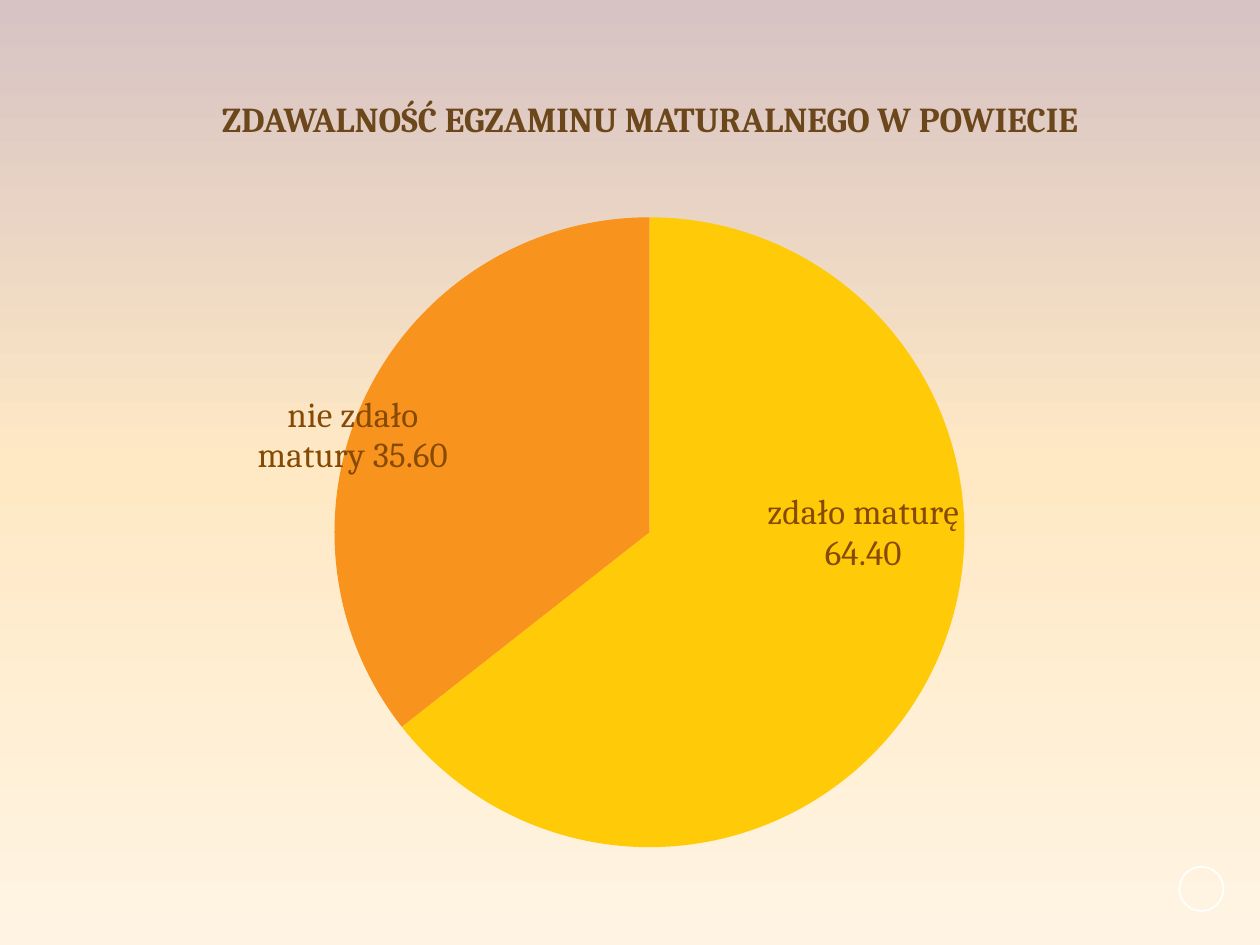
from copy import deepcopy
from dataclasses import dataclass

from pptx import Presentation
from pptx.chart.data import CategoryChartData
from pptx.chart.point import Point
from pptx.dml.color import RGBColor
from pptx.enum.chart import XL_CHART_TYPE, XL_LABEL_POSITION
from pptx.enum.shapes import MSO_SHAPE
from pptx.enum.text import MSO_ANCHOR, PP_ALIGN
from pptx.oxml import parse_xml
from pptx.oxml.ns import nsdecls
from pptx.slide import Slide
from pptx.util import Inches, Pt

FONT = "Cambria"
CHART_WIDTH = 8.19
CHART_HEIGHT = 5.35
PIE_DIAMETER = 5


@dataclass(frozen=True)
class Result:
    category: str
    value: float
    colour: str
    label_lines: tuple[str, ...]
    label_shift: tuple[float, float]


RESULTS = (
    Result("zdało maturę", 64.4, "FFCA08", ("zdało maturę", "64.40"), (0.07, -0.1)),
    Result("nie zdało matury", 35.6, "F8931D", ("nie zdało", "matury 35.60"), (-0.15, -0.04)),
)
BACKGROUND_STOPS = ((0, "D7C3C3"), (0.5, "FFE9C5"), (1, "FFF4E3"))


def rgb(value: str) -> RGBColor:
    return RGBColor.from_string(value)


def style_font(font, size: float, colour: str, bold: bool = False) -> None:
    font.name = FONT
    font.size = Pt(size)
    font.bold = bold
    font.color.rgb = rgb(colour)


def paint_background(slide: Slide) -> None:
    fill = slide.background.fill
    fill.gradient()
    fill.gradient_angle = 270
    stop_list = slide.element.xpath(".//a:gsLst")[0]
    stop_list.append(deepcopy(stop_list[-1]))
    for stop, (position, colour) in zip(fill.gradient_stops, BACKGROUND_STOPS):
        stop.position = position
        stop.color.rgb = rgb(colour)


def manual_layout(settings: dict[str, str | float]):
    entries = "".join(f'<c:{key} val="{value}"/>' for key, value in settings.items())
    return parse_xml(
        f'<c:layout {nsdecls("c")}><c:manualLayout>{entries}</c:manualLayout></c:layout>'
    )


def draw_slice(point: Point, result: Result) -> None:
    point.format.fill.solid()
    point.format.fill.fore_color.rgb = rgb(result.colour)
    point.format.line.fill.background()
    label = point.data_label
    frame = label.text_frame
    for index, line in enumerate(result.label_lines):
        paragraph = frame.paragraphs[0] if index == 0 else frame.add_paragraph()
        run = paragraph.add_run()
        run.text = line
        style_font(run.font, 20, "864A04")
    label.position = XL_LABEL_POSITION.CENTER
    shift_x, shift_y = result.label_shift
    label_index = frame._txBody.xpath("ancestor::c:dLbl/c:idx")[0]
    label_index.addnext(manual_layout({"x": shift_x, "y": shift_y}))


def draw_pie(slide: Slide) -> None:
    data = CategoryChartData(number_format="0.00")
    data.categories = [result.category for result in RESULTS]
    data.add_series("Series 1", [result.value for result in RESULTS])
    chart = slide.shapes.add_chart(
        XL_CHART_TYPE.PIE,
        Inches(1.06), Inches(1.55), Inches(CHART_WIDTH), Inches(CHART_HEIGHT),
        data,
    ).chart
    chart.has_title = False
    chart.has_legend = False
    style_font(chart.font, 10, "000000")
    plot = chart.plots[0]
    plot.vary_by_categories = True
    pie = plot.series[0]
    labels = pie.data_labels
    labels.show_value = True
    labels.show_category_name = True
    labels.number_format = "0.00"
    labels.number_format_is_linked = False
    for index, result in enumerate(RESULTS):
        draw_slice(pie.points[index], result)
    plot_area = chart.element.xpath(".//c:plotArea")[0]
    for automatic in plot_area.xpath("c:layout"):
        plot_area.remove(automatic)
    width_share = PIE_DIAMETER / CHART_WIDTH
    height_share = PIE_DIAMETER / CHART_HEIGHT
    plot_area.insert(0, manual_layout({
        "layoutTarget": "inner", "xMode": "edge", "yMode": "edge",
        "x": (1 - width_share) / 2, "y": (1 - height_share) / 2,
        "w": width_share, "h": height_share,
    }))


def draw_title(slide: Slide) -> None:
    title = slide.shapes.add_textbox(Inches(0.66), Inches(0.76), Inches(9), Inches(1.25))
    frame = title.text_frame
    frame.word_wrap = True
    frame.vertical_anchor = MSO_ANCHOR.TOP
    paragraph = frame.paragraphs[0]
    paragraph.alignment = PP_ALIGN.CENTER
    paragraph.line_spacing = 0.9
    run = paragraph.add_run()
    run.text = "ZDAWALNOŚĆ EGZAMINU MATURALNEGO W POWIECIE"
    style_font(run.font, 20, "6B471B", bold=True)


def draw_corner_ring(slide: Slide) -> None:
    ring = slide.shapes.add_shape(
        MSO_SHAPE.OVAL, Inches(9.36), Inches(6.88), Inches(0.35), Inches(0.35)
    )
    ring.shadow.inherit = False
    ring.fill.background()
    ring.line.color.rgb = rgb("FFFFFF")
    ring.line.width = Pt(1)


def main() -> None:
    presentation = Presentation()
    presentation.slide_width = Inches(10)
    presentation.slide_height = Inches(7.5)
    slide = presentation.slides.add_slide(presentation.slide_layouts[6])
    paint_background(slide)
    draw_corner_ring(slide)
    draw_pie(slide)
    draw_title(slide)
    presentation.save("out.pptx")


if __name__ == "__main__":
    main()
